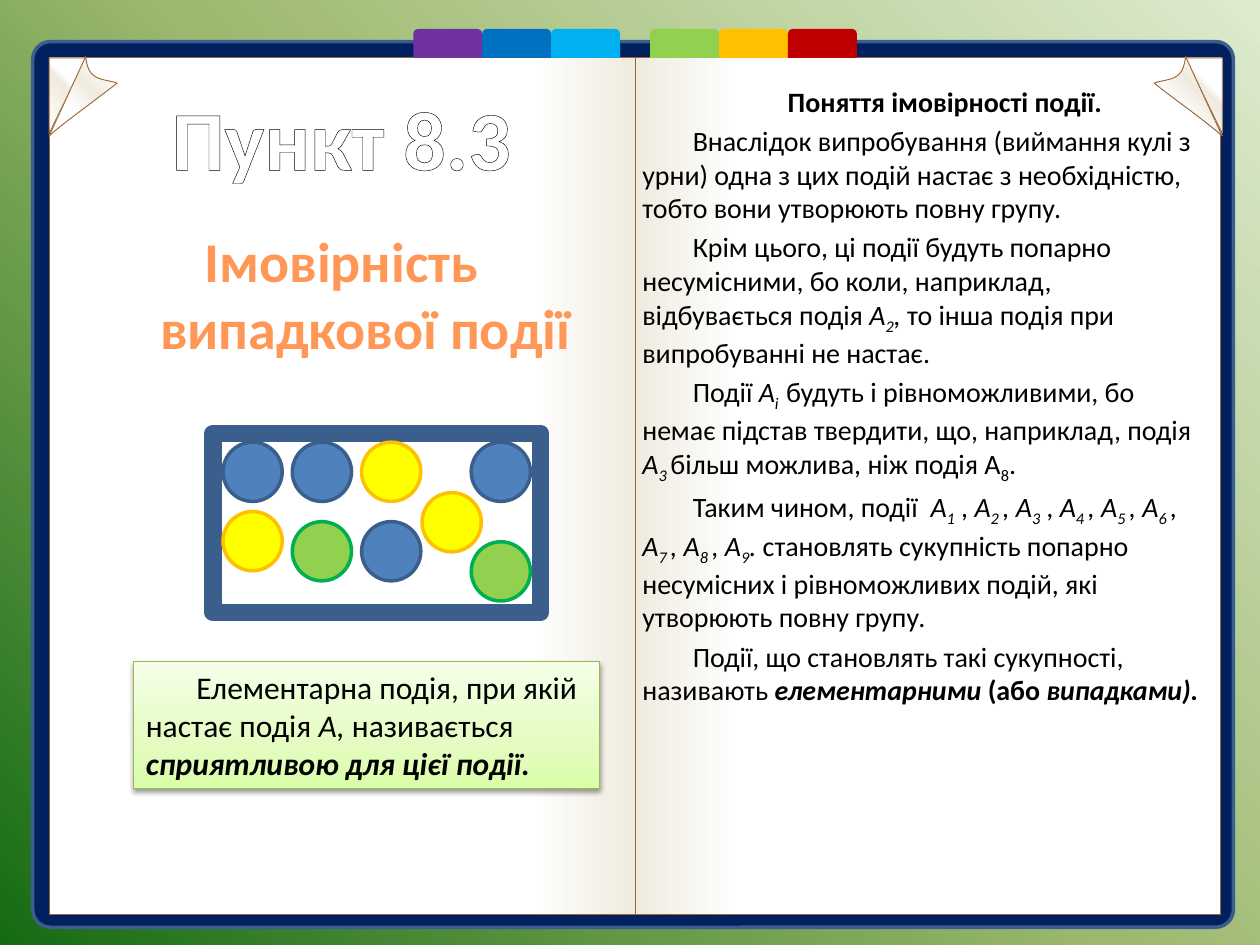
from dataclasses import dataclass
from typing import NamedTuple, Optional, Sequence, Union

from lxml.etree import SubElement
from pptx import Presentation
from pptx.dml.color import RGBColor
from pptx.enum.shapes import MSO_SHAPE as Preset
from pptx.enum.text import MSO_ANCHOR as Anchor, PP_ALIGN as Align
from pptx.oxml import parse_xml
from pptx.oxml.ns import nsdecls, qn
from pptx.util import Emu, Inches, Pt

COLUMNS, ROWS = 100, 75
SLIDE_WIDTH, SLIDE_HEIGHT = Inches(10), Inches(7.5)


class Gradient(NamedTuple):
    angle: int
    stops: tuple


class Outline(NamedTuple):
    color: str
    width: float


class Box(NamedTuple):
    column: float
    row: float
    columns: float
    rows: float

    def lengths(self) -> tuple:
        return (across(self.column), down(self.row), across(self.columns), down(self.rows))


class Ball(NamedTuple):
    column: float
    row: float
    fill: str
    edge: str


class Segment(NamedTuple):
    text: str
    style: str = ""


@dataclass(frozen=True)
class Theme:
    font: str = "Calibri"
    title_size: int = 48
    topic_size: int = 32
    callout_size: int = 18
    body_size: int = 16
    ink: str = "000000"
    paper: str = "FFFFFF"
    cover: str = "002060"
    edge: str = "3A5F8C"
    paper_line: Outline = Outline("996633", 0.5)
    backdrop: Gradient = Gradient(135, ((0, "DDEBCF"), (50, "9CB86E"), (100, "156B13")))
    page_stops: tuple = ((0, "FFFFFF"), (82, "FFFFFF"), (100, "F0EBE0"))
    fold: Gradient = Gradient(315, ((0, "FFFFFF"), (57, "F0EBE0"), (65, "FFFFFF")))
    curl: Gradient = Gradient(135, ((12, "FFFFFF"), (40, "F0EBE0"), (65, "FFFFFF")))
    topic: Gradient = Gradient(90, ((0, "9D4700"), (78, "FF9856"), (100, "FFF5F1")))
    callout: Gradient = Gradient(270, ((0, "DAFDA7"), (35, "E4FCC2"), (100, "F5FFE7")))
    callout_line: Outline = Outline("98B955", 0.75)
    left_tabs: tuple = ("7030A0", "0070C0", "00B0F0")
    right_tabs: tuple = ("92D050", "FFC000", "C00000")
    blue: tuple = ("4F81BD", "3A5F8C")
    yellow: tuple = ("FFFF00", "FFC000")
    green: tuple = ("92D050", "00B050")


THEME = Theme()
PAGE_MIRROR = 100.9
BALL_SIZE = 4.7
TAB_WIDTH, TAB_HEIGHT = 5.47, 2.3
BALLS = (
    Ball(28.7, 41.4, *THEME.blue), Ball(23.2, 35.1, *THEME.blue),
    Ball(17.7, 35.1, *THEME.blue), Ball(37.4, 35.1, *THEME.blue),
    Ball(33.5, 39.1, *THEME.yellow), Ball(17.7, 40.6, *THEME.yellow),
    Ball(28.7, 35.1, *THEME.yellow), Ball(37.4, 43, *THEME.green),
    Ball(23.2, 41.4, *THEME.green),
)
HEADING = (Segment("Поняття імовірності події. ", "b"),)
BODY = (
    (Segment("Внаслідок випробування (виймання кулі з урни) одна з цих подій настає "
             "з необхідністю, тобто вони утворюють повну групу."),),
    (Segment("Крім цього, ці події будуть попарно несумісними, бо коли, наприклад, "
             "відбувається подія "), Segment("А", "i"), Segment("2", "is"),
     Segment(", ", "i"), Segment("то інша подія при випробуванні не настає.")),
    (Segment("Події "), Segment("A", "i"), Segment("і  ", "is"),
     Segment("будуть і рівноможливими, бо немає підстав твердити, що, наприклад, подія "),
     Segment("А", "i"), Segment("3 ", "is"), Segment("більш можлива, ніж подія А"),
     Segment("8", "s"), Segment(".")),
    (Segment("Таким чином, події  "), Segment("A", "i"), Segment("1", "is"),
     Segment(" ,"), Segment(" A", "i"), Segment("2 ", "is"), Segment(", А", "i"),
     Segment("3", "is"), Segment(" , "), Segment("А", "i"),
     *(part for number in range(4, 9)
       for part in (Segment(f"{number} ", "is"), Segment(", А", "i"))),
     Segment("9", "is"), Segment(". ", "i"),
     Segment("становлять сукупність попарно несумісних і рівноможливих подій, "
             "які утворюють повну групу.")),
    (Segment("Події, що становлять такі сукупності, називають "),
     Segment("елементарними ", "bi"), Segment("(або ", "b"), Segment("випадками).", "bi")),
)
CALLOUT = (
    Segment("Елементарна подія, при якій настає подія "), Segment("А, ", "i"),
    Segment("називається "), Segment("сприятливою для цієї події.", "bi"),
)


def across(columns: float) -> Emu:
    return Emu(round(SLIDE_WIDTH * columns / COLUMNS))


def down(rows: float) -> Emu:
    return Emu(round(SLIDE_HEIGHT * rows / ROWS))


def apply_gradient(fill, owner, gradient: Gradient) -> None:
    fill.background()
    stops = "".join(
        f'<a:gs pos="{position * 1000}"><a:srgbClr val="{color}"/></a:gs>'
        for position, color in gradient.stops
    )
    element = parse_xml(
        f'<a:gradFill {nsdecls("a")} rotWithShape="1"><a:gsLst>{stops}</a:gsLst>'
        f'<a:lin ang="{gradient.angle * 60000}" scaled="0"/></a:gradFill>'
    )
    empty = owner.find(qn("a:noFill"))
    owner.replace(empty, element)


def paint(shape, fill: Union[str, Gradient, None], outline: Optional[Outline] = None) -> None:
    shape.shadow.inherit = False
    if isinstance(fill, Gradient):
        apply_gradient(shape.fill, shape.element.spPr, fill)
    elif fill:
        shape.fill.solid()
        shape.fill.fore_color.rgb = RGBColor.from_string(fill)
    else:
        shape.fill.background()
    if outline:
        shape.line.color.rgb = RGBColor.from_string(outline.color)
        shape.line.width = Pt(outline.width)
    else:
        shape.line.fill.background()


def draw_shape(slide, preset, box: Box, fill, outline: Optional[Outline] = None):
    shape = slide.shapes.add_shape(preset, *box.lengths())
    paint(shape, fill, outline)
    return shape


def curve(start: tuple, first: tuple, second: tuple, end: tuple, steps: int = 12) -> list:
    def point(t: float) -> tuple:
        weights = ((1 - t) ** 3, 3 * t * (1 - t) ** 2, 3 * t * t * (1 - t), t ** 3)
        controls = (start, first, second, end)
        return tuple(sum(w * c[axis] for w, c in zip(weights, controls)) for axis in (0, 1))

    return [point(step / steps) for step in range(steps + 1)]


def draw_corner(slide, points: Sequence[tuple], fill: Gradient, mirrored: bool) -> None:
    placed = [
        (across(PAGE_MIRROR - x if mirrored else x), down(y)) for x, y in points
    ]
    builder = slide.shapes.build_freeform(*placed[0], scale=1.0)
    builder.add_line_segments(placed[1:], close=True)
    paint(builder.convert_to_shape(), fill, THEME.paper_line)


def write(paragraph, segments: Sequence[Segment], size: int, align=Align.LEFT,
          margin: float = 0, indent: float = 4, space: float = 0) -> None:
    paragraph.alignment = align
    paragraph.space_before = Pt(space)
    properties = paragraph._p.get_or_add_pPr()
    properties.set("marL", str(across(margin)))
    properties.set("indent", str(across(indent)))
    paragraph.font.name = THEME.font
    paragraph.font.size = Pt(size)
    paragraph.font.color.rgb = RGBColor.from_string(THEME.ink)
    for segment in segments:
        run = paragraph.add_run()
        run.text = segment.text
        run.font.bold = "b" in segment.style
        run.font.italic = "i" in segment.style
        if "s" in segment.style:
            run._r.get_or_add_rPr().set("baseline", "-25000")


def draw_book(slide) -> None:
    cover = draw_shape(slide, Preset.ROUNDED_RECTANGLE, Box(2.6, 3.3, 95.3, 70.3),
                       THEME.cover, Outline(THEME.edge, 2))
    cover.adjustments[0] = 0.02
    for column, angle in ((3.9, 0), (50.4, 180)):
        draw_shape(slide, Preset.RECTANGLE, Box(column, 4.6, 46.5, 68),
                   Gradient(angle, THEME.page_stops), THEME.paper_line)
    fold = [(6.8, 4.6), (3.9, 10.6), (3.9, 4.6)]
    curl = (curve((9.3, 6.6), (7.4, 8.1), (5.1, 9.7), (3.9, 10.8))
            + curve((6.8, 4.5), (7, 6.5), (8.1, 6.2), (9.3, 6.6))[:-1])
    for mirrored in (True, False):
        draw_corner(slide, fold, THEME.fold, mirrored)
        draw_corner(slide, curl, THEME.curl, mirrored)
    for start, colors in ((32.8, THEME.left_tabs), (51.6, THEME.right_tabs)):
        for index, color in enumerate(colors):
            draw_shape(slide, Preset.ROUND_2_SAME_RECTANGLE,
                       Box(start + index * TAB_WIDTH, 2.3, TAB_WIDTH, TAB_HEIGHT), color)


def draw_title(slide) -> None:
    title = slide.shapes.title
    title.left, title.top, title.width, title.height = Box(5, 6.2, 44.2, 9.3).lengths()
    title.text_frame.vertical_anchor = Anchor.MIDDLE
    paragraph = title.text_frame.paragraphs[0]
    write(paragraph, (Segment("Пункт 8.3", "b"),), THEME.title_size, Align.CENTER, indent=0)
    run = paragraph.runs[0]
    run.font.color.rgb = RGBColor.from_string(THEME.paper)
    line = parse_xml(f'<a:ln {nsdecls("a")} w="9525"><a:solidFill>'
                     f'<a:srgbClr val="{THEME.ink}"/></a:solidFill></a:ln>')
    run._r.get_or_add_rPr().insert(0, line)


def add_text_frame(slide, box: Box):
    frame = slide.shapes.add_textbox(*box.lengths()).text_frame
    frame.word_wrap = True
    return frame


def draw_texts(slide) -> None:
    frame = add_text_frame(slide, Box(50, 6.2, 46.5, 64.1))
    write(frame.paragraphs[0], HEADING, THEME.body_size, Align.CENTER, space=3.2)
    for segments in BODY:
        write(frame.add_paragraph(), segments, THEME.body_size, space=3.2)
    topic = add_text_frame(slide, Box(5, 17.5, 44.2, 52.8)).paragraphs[0]
    write(topic, (Segment("Імовірність випадкової події", "b"),), THEME.topic_size,
          Align.CENTER, margin=3.8, indent=-3.8, space=6.4)
    run = topic.runs[0]
    apply_gradient(run.font.fill, run._r.get_or_add_rPr(), THEME.topic)


def draw_callout(slide) -> None:
    callout = draw_shape(slide, Preset.RECTANGLE, Box(10.6, 52.5, 37, 10.1),
                         THEME.callout, THEME.callout_line)
    effects = callout.element.spPr.find(qn("a:effectLst"))
    shadow = SubElement(effects, qn("a:outerShdw"), blurRad=str(Pt(3.1)),
                        dist=str(Pt(1.6)), dir="5400000", rotWithShape="0")
    color = SubElement(shadow, qn("a:srgbClr"), val=THEME.ink)
    SubElement(color, qn("a:alpha"), val="38000")
    callout.text_frame.word_wrap = True
    write(callout.text_frame.paragraphs[0], CALLOUT, THEME.callout_size)


def draw_urn(slide) -> None:
    draw_shape(slide, Preset.RECTANGLE, Box(16.9, 34.4, 26, 14.2), None,
               Outline(THEME.edge, 10))
    for ball in BALLS:
        draw_shape(slide, Preset.OVAL, Box(ball.column, ball.row, BALL_SIZE, BALL_SIZE),
                   ball.fill, Outline(ball.edge, 2))


def main() -> None:
    presentation = Presentation()
    presentation.slide_width, presentation.slide_height = SLIDE_WIDTH, SLIDE_HEIGHT
    slide = presentation.slides.add_slide(presentation.slide_layouts[5])
    fill = slide.background.fill
    fill.background()
    apply_gradient(fill, slide.element.xpath(".//p:bgPr")[0], THEME.backdrop)
    draw_book(slide)
    draw_title(slide)
    draw_texts(slide)
    draw_callout(slide)
    draw_urn(slide)
    title_element = slide.shapes.title.element
    title_element.getparent().append(title_element)
    presentation.save("out.pptx")


if __name__ == "__main__":
    main()
